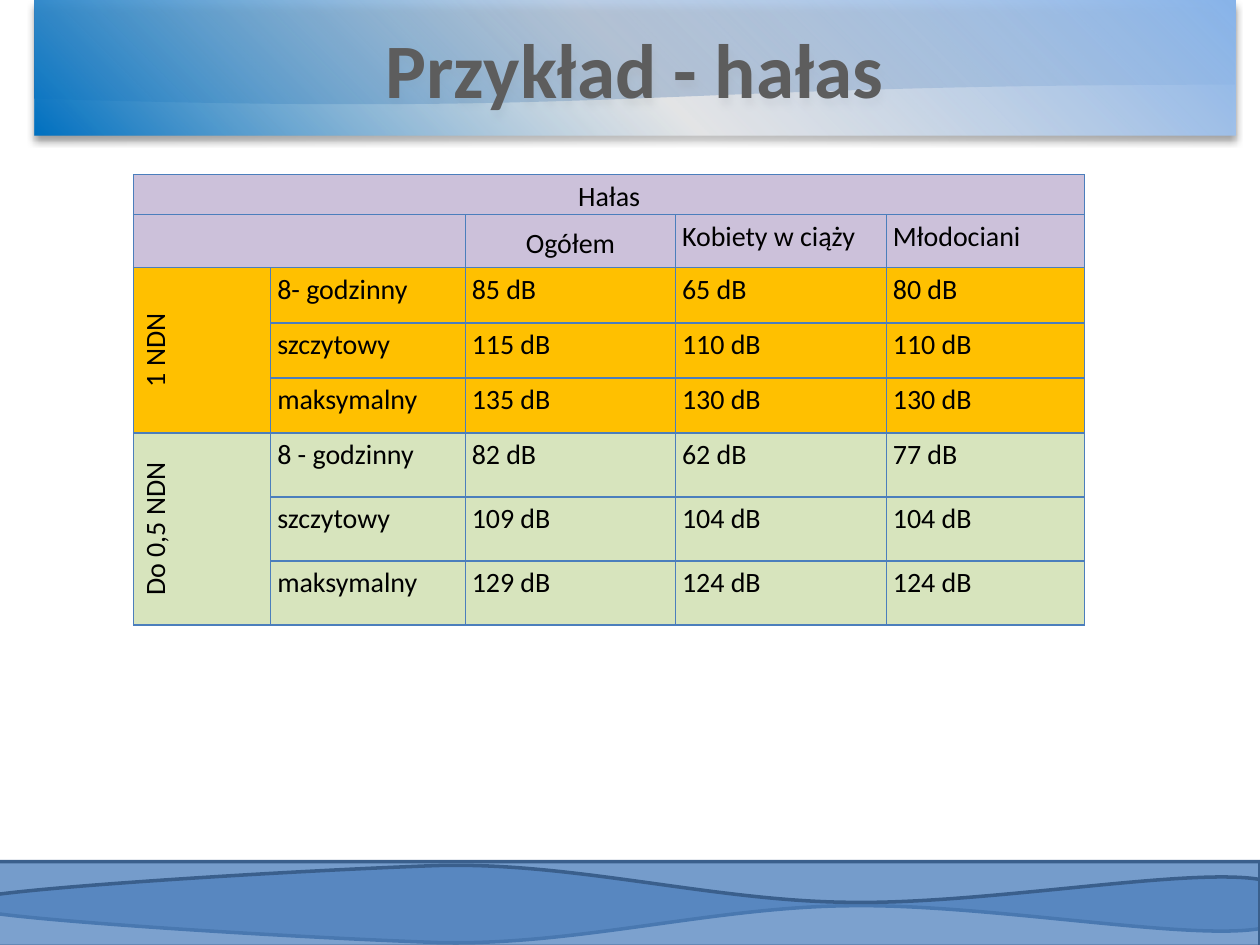
from pptx import Presentation
from pptx.dml.color import RGBColor
from pptx.enum.shapes import MSO_SHAPE as Shape
from pptx.enum.text import MSO_ANCHOR as Anchor, PP_ALIGN as Align
from pptx.oxml import parse_xml
from pptx.oxml.ns import nsdecls
from pptx.util import Cm, Pt

FONT = "Calibri"
BLUE, LILAC, AMBER, GREEN = "4F81BD", "CCC1DA", "FFC000", "D7E4BD"
WAVE_EDGE = [(-0.08, 17.37), (25.4, 17.37), (25.4, 18.72)]
WAVE_CURVES = [
    ((23.93, 18.97), (19.86, 18.21), (17.09, 18.26)),
    ((14.33, 18.29), (11.56, 19.08), (8.79, 19.0)),
    ((5.99, 18.9), (1.47, 18.62), (-0.05, 18.42)),
]
MIRROR_SUM = 36.45
COLUMN_WIDTHS = [2.77, 3.92, 4.24, 4.25, 4.0]
ROW_HEIGHTS = [0.81, 1.07] + [1.11] * 3 + [1.29] * 3
ROW_COLOURS = [LILAC] * 2 + [AMBER] * 3 + [GREEN] * 3
MERGES = [((0, 0), (0, 4)), ((1, 0), (1, 1)), ((2, 0), (4, 0)), ((5, 0), (7, 0))]
NOISE_LIMITS = [
    ["Hałas", "", "", "", ""],
    ["", "", "Ogółem", "Kobiety w ciąży", "Młodociani"],
    ["1 NDN", "8- godzinny", "85 dB", "65 dB", "80 dB"],
    ["", "szczytowy", "115 dB", "110 dB", "110 dB"],
    ["", "maksymalny", "135 dB", "130 dB", "130 dB"],
    ["Do 0,5 NDN", "8 - godzinny", "82 dB", "62 dB", "77 dB"],
    ["", "szczytowy", "109 dB", "104 dB", "104 dB"],
    ["", "maksymalny", "129 dB", "124 dB", "124 dB"],
]


def paint(fill, colour, alpha=None):
    """Fill with a solid hex colour, optionally with an opacity in percent."""
    fill.solid()
    fill.fore_color.rgb = RGBColor.from_string(colour)
    if alpha:
        tone = fill._xPr.find(".//{*}srgbClr")
        tone.append(parse_xml(f'<a:alpha {nsdecls("a")} val="{alpha * 1000}"/>'))


def style_text(paragraph, size, colour, bold=False):
    """Set the font of a whole paragraph."""
    font = paragraph.font
    font.name, font.size, font.bold = FONT, Pt(size), bold
    paint(font.fill, colour)


def bend(shape, curves):
    """Turn the last straight segments of a freeform into cubic curves."""
    segments = shape._element.spPr.findall(".//{*}lnTo")
    start = len(WAVE_EDGE) - 1
    for segment, curve in zip(segments[start:], curves):
        points = "".join(f'<a:pt x="{x - shape.left}" y="{y - shape.top}"/>'
                         for x, y in curve)
        segment.getparent().replace(segment, parse_xml(
            f'<a:cubicBezTo {nsdecls("a")}>{points}</a:cubicBezTo>'))


def add_wave(slide, alpha, mirrored=False):
    """Draw one translucent footer wave, upright or mirrored."""
    def place(points):
        return [(Cm(x), Cm(MIRROR_SUM - y if mirrored else y)) for x, y in points]

    curves = [place(curve) for curve in WAVE_CURVES]
    outline = place(WAVE_EDGE) + [curve[-1] for curve in curves]
    builder = slide.shapes.build_freeform(*outline[0])
    builder.add_line_segments(outline[1:], close=True)
    wave = builder.convert_to_shape()
    bend(wave, curves)
    wave.shadow.inherit = False
    paint(wave.fill, BLUE, alpha)
    paint(wave.line.fill, "3A5F8C")
    wave.line.width = Pt(2)


def add_panel(slide, preset, height):
    """Add a borderless header shape of the given height."""
    panel = slide.shapes.add_shape(preset, Cm(0.69), 0, Cm(24.21), Cm(height))
    panel.shadow.inherit = False
    panel.line.fill.background()
    paint(panel.fill, BLUE)
    return panel


def add_title(slide, text):
    """Add the gradient title banner with its soft shadow."""
    add_panel(slide, Shape.FLOWCHART_DOCUMENT, 2.13)
    banner = add_panel(slide, Shape.RECTANGLE, 2.73)
    properties = banner._element.spPr
    properties.replace(properties.find("{*}solidFill"), parse_xml(
        f'<a:gradFill {nsdecls("a")}><a:gsLst>'
        '<a:gs pos="0"><a:srgbClr val="0070C0"/></a:gs>'
        '<a:gs pos="50000"><a:srgbClr val="F9FBFE"><a:alpha val="62000"/></a:srgbClr></a:gs>'
        '<a:gs pos="100000"><a:srgbClr val="87B3E9"/></a:gs>'
        '</a:gsLst><a:lin ang="18900000" scaled="0"/></a:gradFill>'))
    properties.find("{*}effectLst").append(parse_xml(
        f'<a:outerShdw {nsdecls("a")} blurRad="{Pt(4)}" dist="{Pt(3)}" dir="5400000" '
        'rotWithShape="0"><a:srgbClr val="000000"><a:alpha val="40000"/></a:srgbClr>'
        '</a:outerShdw>'))
    frame = banner.text_frame
    frame.word_wrap, frame.vertical_anchor = True, Anchor.MIDDLE
    title = frame.paragraphs[0]
    title.text, title.alignment = text, Align.CENTER
    style_text(title, 44, "5D5D5D", bold=True)


def add_borders(cell):
    """Draw thin blue lines on all sides of a cell."""
    properties = cell._tc.get_or_add_tcPr()
    for side in "LRTB":
        properties.append(parse_xml(
            f'<a:ln{side} {nsdecls("a")} w="{Pt(0.75)}"><a:solidFill>'
            f'<a:srgbClr val="4B7EBC"/></a:solidFill></a:ln{side}>'))


def fill_cell(cell, text, colour):
    """Write and format one table cell."""
    add_borders(cell)
    paint(cell.fill, colour)
    cell.margin_left = cell.margin_right = Cm(0.13)
    cell.margin_top = cell.margin_bottom = 0
    entry = cell.text_frame.paragraphs[0]
    entry.text, entry.line_spacing = text, 1.15
    style_text(entry, 16, "000000")


def turn_upwards(cell):
    """Make the text of a group heading read from bottom to top."""
    cell._tc.get_or_add_tcPr().set("vert", "vert270")
    indents = cell.text_frame.paragraphs[0]._p.get_or_add_pPr()
    for side in ("marL", "marR"):
        indents.set(side, str(Cm(0.2)))


def add_noise_table(slide):
    """Add the table of noise limits with merged headings."""
    table = slide.shapes.add_table(
        len(ROW_HEIGHTS), len(COLUMN_WIDTHS), Cm(2.69), Cm(3.52),
        Cm(sum(COLUMN_WIDTHS)), Cm(sum(ROW_HEIGHTS))).table
    table.first_row = table.horz_banding = False
    for column, width in zip(table.columns, COLUMN_WIDTHS):
        column.width = Cm(width)
    for r, (height, colour) in enumerate(zip(ROW_HEIGHTS, ROW_COLOURS)):
        table.rows[r].height = Cm(height)
        for c, text in enumerate(NOISE_LIMITS[r]):
            fill_cell(table.cell(r, c), text, colour)
    for first, last in MERGES:
        table.cell(*first).merge(table.cell(*last))
    for place in ((0, 0), (1, 2), (2, 0), (5, 0)):
        table.cell(*place).text_frame.paragraphs[0].alignment = Align.CENTER
    table.cell(1, 2).vertical_anchor = Anchor.MIDDLE
    for row in (2, 5):
        turn_upwards(table.cell(row, 0))


def main():
    """Build and save the slide."""
    deck = Presentation()
    deck.slide_width, deck.slide_height = Cm(25.4), Cm(19.05)
    slide = deck.slides.add_slide(deck.slide_layouts[6])
    add_wave(slide, 78)
    add_wave(slide, 74, mirrored=True)
    add_title(slide, "Przykład - hałas")
    add_noise_table(slide)
    deck.save("out.pptx")


if __name__ == "__main__":
    main()
